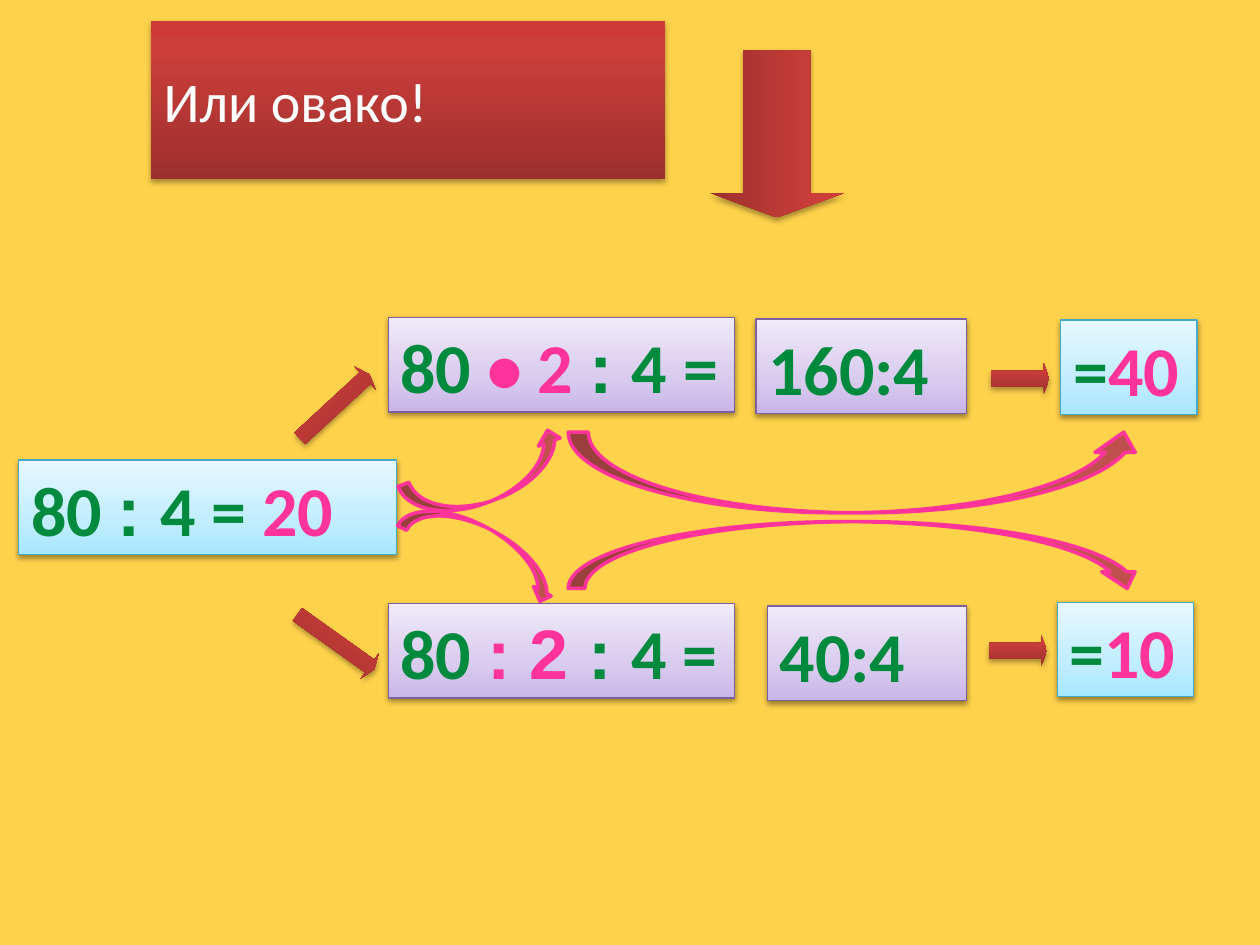
from lxml.etree import SubElement as Sub
from pptx import Presentation
from pptx.dml.color import RGBColor as Rgb
from pptx.enum.shapes import MSO_SHAPE as Kind
from pptx.enum.text import MSO_ANCHOR as Anchor, PP_ALIGN as Align
from pptx.oxml.ns import qn
from pptx.util import Pt

AMBER = Rgb(0xFF, 0xC0, 0x00)
GREEN = Rgb(0x00, 0x8A, 0x3E)
PINK = Rgb(0xFF, 0x33, 0x99)
BRICK = Rgb(0xC0, 0x50, 0x4D)
WHITE = Rgb(0xFF, 0xFF, 0xFF)
BLACK = Rgb(0x00, 0x00, 0x00)
TEAL = Rgb(0x46, 0xAA, 0xC5)
PURPLE = Rgb(0x7D, 0x60, 0xA0)

# Gradient stops from the bottom edge up: percent, colour
SKY = [(0, Rgb(0xA7, 0xE6, 0xFF)), (35, Rgb(0xC1, 0xED, 0xFF)),
       (100, Rgb(0xE7, 0xF8, 0xFF))]
LILAC = [(0, Rgb(0xC9, 0xB5, 0xE8)), (35, Rgb(0xD8, 0xCB, 0xEE)),
         (100, Rgb(0xF0, 0xEA, 0xF9))]
RED = [(0, Rgb(0x9C, 0x2F, 0x2D)), (80, Rgb(0xCB, 0x3E, 0x3A)),
       (100, Rgb(0xCE, 0x3B, 0x37))]

BODY, SIGN = "Calibri", "Arial"
ROW = 54


def add_back(slide):
    fill = slide.background.fill
    fill.solid()
    fill.fore_color.rgb = AMBER
    tint = slide.element.find(".//" + qn("a:srgbClr"))
    Sub(tint, qn("a:alpha"), val="70000")


def add_form(slide, kind, box, turn=0):
    form = slide.shapes.add_shape(kind, *[Pt(n) for n in box])
    form.rotation = turn
    form.shadow.inherit = False
    return form


def set_grad(form, stops):
    form.fill.gradient()
    form.fill.gradient_angle = 90
    items = form.element.spPr.find(".//" + qn("a:gsLst"))
    items.clear()
    for spot, tint in stops:
        stop = Sub(items, qn("a:gs"), pos=str(spot * 1000))
        Sub(stop, qn("a:srgbClr"), val=str(tint))


def set_shade(form, drop, alpha):
    """Give the shape a soft shadow straight below it."""
    group = form.element.spPr.find(qn("a:effectLst"))
    shade = Sub(group, qn("a:outerShdw"), blurRad=str(Pt(3.15)),
                dist=str(Pt(drop)), dir="5400000", rotWithShape="0")
    tint = Sub(shade, qn("a:srgbClr"), val=str(BLACK))
    Sub(tint, qn("a:alpha"), val=str(alpha * 1000))


def set_line(form, tint, width):
    form.line.color.rgb = tint
    form.line.width = Pt(width)


def add_text(form, runs, size, bold, anchor):
    frame = form.text_frame
    frame.word_wrap = True
    frame.vertical_anchor = anchor
    para = frame.paragraphs[0]
    para.alignment = Align.LEFT
    gap = Sub(para._p.get_or_add_pPr(), qn("a:spcBef"))
    Sub(gap, qn("a:spcPct"), val="20000")
    for words, tint, face in runs:
        run = para.add_run()
        run.text = words
        font = run.font
        font.name, font.size, font.bold = face, Pt(size), bold
        font.color.rgb = tint


def add_card(slide, left, top, width, stops, edge, runs):
    card = add_form(slide, Kind.RECTANGLE, (left, top, width, ROW))
    set_grad(card, stops)
    set_line(card, edge, 0.75)
    set_shade(card, 1.57, 38)
    add_text(card, runs, 40, True, Anchor.TOP)


def add_red(slide, kind, box, turn=0):
    form = add_form(slide, kind, box, turn)
    set_grad(form, RED)
    form.line.fill.background()
    set_shade(form, 1.81, 35)
    return form


def add_arrow(slide, box, turn=0):
    arrow = add_red(slide, Kind.RIGHT_ARROW, box, turn)
    arrow.adjustments[0] = 0.5
    arrow.adjustments[1] = 0.181


def add_curve(slide, box, turn=0, flip=False):
    curve = add_form(slide, Kind.CURVED_DOWN_ARROW, box, turn)
    curve.fill.solid()
    curve.fill.fore_color.rgb = BRICK
    set_line(curve, PINK, 2)
    if flip:
        curve.element.spPr.find(qn("a:xfrm")).set("flipV", "1")


def main():
    deck = Presentation()
    deck.slide_width, deck.slide_height = Pt(720), Pt(540)
    slide = deck.slides.add_slide(deck.slide_layouts[6])
    add_back(slide)

    first = ("80 ", GREEN, BODY)
    colon = (": ", GREEN, SIGN)
    last = ("4 =", GREEN, BODY)
    equal = ("=", GREEN, BODY)

    add_card(slide, 10.8, 262.8, 216, SKY, TEAL,
             [first, colon, ("4 = ", GREEN, BODY), ("20", PINK, BODY)])
    for left, top, width, runs in [
        (221.8, 181.4, 198, [first, ("• 2 ", PINK, BODY), colon, last]),
        (221.8, 344.9, 198, [first, (": 2 ", PINK, SIGN), colon, last]),
        (432, 182.2, 120.2, [("160:4", GREEN, BODY)]),
        (438.5, 346.3, 113.8, [("40:4", GREEN, BODY)]),
    ]:
        add_card(slide, left, top, width, LILAC, PURPLE, runs)
    for left, top, value in [(606.2, 182.9, "40"), (604.1, 344.2, "10")]:
        add_card(slide, left, top, 77.8, SKY, TEAL,
                 [equal, (value, PINK, BODY)])

    title = add_red(slide, Kind.RECTANGLE, (86.4, 12.2, 293.8, 90))
    add_text(title, [("Или овако!", WHITE, BODY)], 32, False, Anchor.MIDDLE)

    add_arrow(slide, (396, 38.2, 95.8, 76.3), 90)
    add_arrow(slide, (164.2, 223.2, 54, 18), 317.3)
    add_arrow(slide, (164.9, 357.8, 54, 18), 35.5)
    add_arrow(slide, (566.6, 207.4, 33.1, 18))
    add_arrow(slide, (565.2, 362.9, 33.1, 18))

    add_curve(slide, (226.8, 301.7, 97.9, 23), 28)
    add_curve(slide, (324.7, 298.1, 329, 38.2))
    add_curve(slide, (324.7, 247, 329, 46.1), flip=True)
    add_curve(slide, (229, 259.9, 97.9, 26.6), 339.4, True)

    deck.save("out.pptx")


if __name__ == "__main__":
    main()
